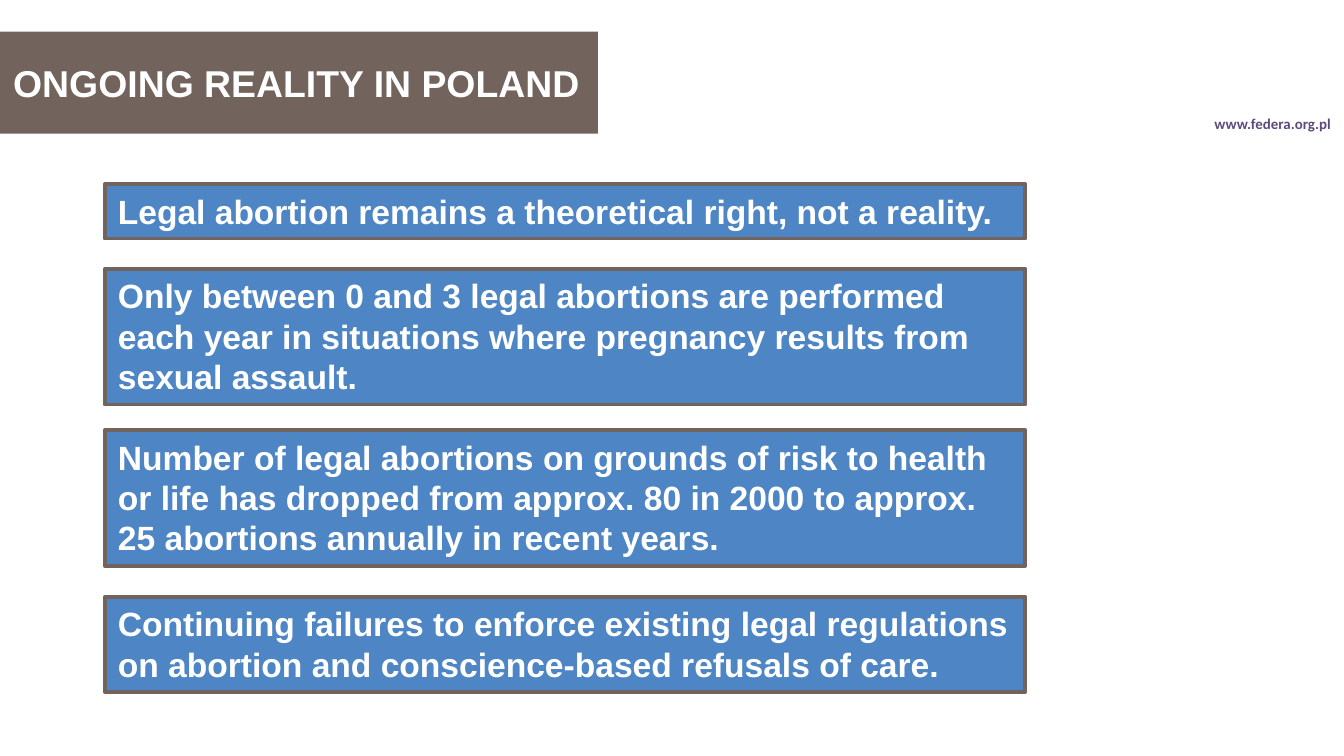
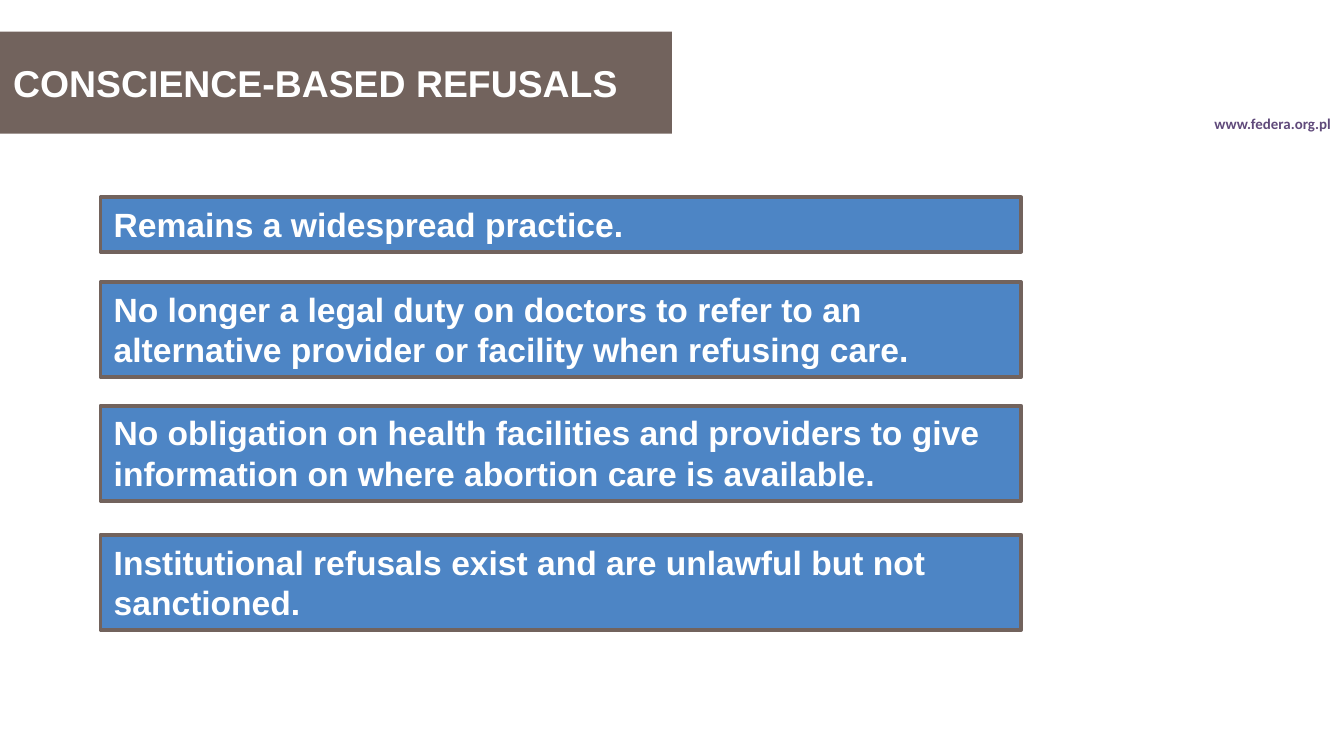
"""Build two slides on abortion care in Poland."""
from dataclasses import dataclass

import pptx
import pptx.dml.color
import pptx.enum.shapes
import pptx.enum.text
import pptx.util

Cm = pptx.util.Cm
Pt = pptx.util.Pt
RGB = pptx.dml.color.RGBColor
Anchor = pptx.enum.text.MSO_ANCHOR
Fit = pptx.enum.text.MSO_AUTO_SIZE
Align = pptx.enum.text.PP_ALIGN
RECT = pptx.enum.shapes.MSO_SHAPE.RECTANGLE


@dataclass(frozen=True)
class Style:
    font: str
    size: int
    color: RGB


@dataclass(frozen=True)
class Theme:
    brown: RGB = RGB(0x72, 0x63, 0x5D)
    blue: RGB = RGB(0x4D, 0x85, 0xC5)
    title: Style = Style("Arial", 20, RGB(255, 255, 255))
    body: Style = Style("Arial", 18, RGB(255, 255, 255))
    site: Style = Style("Calibri", 8, RGB(0x60, 0x4A, 0x7B))
    edge: int = 2


@dataclass(frozen=True)
class Point:
    top: float
    lines: int
    text: str


@dataclass(frozen=True)
class Page:
    title: str
    band: float
    left: float
    points: tuple[Point, ...]


THEME = Theme()
PAGES = (
    Page("ONGOING REALITY IN POLAND", 11.3, 1.98, (
        Point(3.48, 1, "Legal abortion remains a theoretical right, not a reality."),
        Point(5.08, 3, "Only between 0 and 3 legal abortions are performed each year "
                       "in situations where pregnancy results from sexual assault."),
        Point(8.13, 3, "Number of legal abortions on grounds of risk to health or life "
                       "has dropped from approx. 80 in 2000 to approx. 25 abortions "
                       "annually in recent years."),
        Point(11.28, 2, "Continuing failures to enforce existing legal regulations on "
                        "abortion and conscience-based refusals of care."),
    )),
    Page("CONSCIENCE-BASED REFUSALS", 12.7, 1.9, (
        Point(3.73, 1, "Remains a widespread practice."),
        Point(5.33, 2, "No longer a legal duty on doctors to refer to an alternative "
                       "provider or facility when refusing care."),
        Point(7.67, 2, "No obligation on health facilities and providers to give "
                       "information on where abortion care is available."),
        Point(10.11, 2, "Institutional refusals exist and are unlawful but not sanctioned."),
    )),
)


def write(shape, text: str, style: Style, anchor=Anchor.TOP, wrap: bool = True) -> None:
    frame = shape.text_frame
    frame.word_wrap = wrap
    frame.vertical_anchor = anchor
    para = frame.paragraphs[0]
    para.alignment = Align.LEFT
    run = para.add_run()
    run.text = text
    run.font.name = style.font
    run.font.size = Pt(style.size)
    run.font.bold = True
    run.font.color.rgb = style.color


def block(slide, left: float, top: float, width: float, height: float, fill: RGB):
    shape = slide.shapes.add_shape(RECT, Cm(left), Cm(top), Cm(width), Cm(height))
    shape.shadow.inherit = False
    shape.fill.solid()
    shape.fill.fore_color.rgb = fill
    shape.line.fill.background()
    return shape


def draw_frame(slide, page: Page) -> None:
    band = block(slide, 0, 0.6, page.band, 1.93, THEME.brown)
    write(band, page.title, THEME.title, Anchor.MIDDLE)
    site = slide.shapes.add_textbox(Cm(22.7), Cm(2.05), Cm(2.78), Cm(0.6))
    write(site, "www.federa.org.pl", THEME.site, wrap=False)
    site.text_frame.auto_size = Fit.SHAPE_TO_FIT_TEXT


def draw_point(slide, left: float, point: Point) -> None:
    height = 0.26 + 0.77 * point.lines
    box = block(slide, left, point.top, 17.4, height, THEME.blue)
    box.line.color.rgb = THEME.brown
    box.line.width = Pt(THEME.edge)
    write(box, point.text, THEME.body)
    box.text_frame.auto_size = Fit.SHAPE_TO_FIT_TEXT


def main() -> None:
    deck = pptx.Presentation()
    deck.slide_width, deck.slide_height = Cm(25.4), Cm(14.29)
    for page in PAGES:
        slide = deck.slides.add_slide(deck.slide_layouts[6])
        draw_frame(slide, page)
        for point in page.points:
            draw_point(slide, page.left, point)
    deck.save("out.pptx")


if __name__ == "__main__":
    main()
